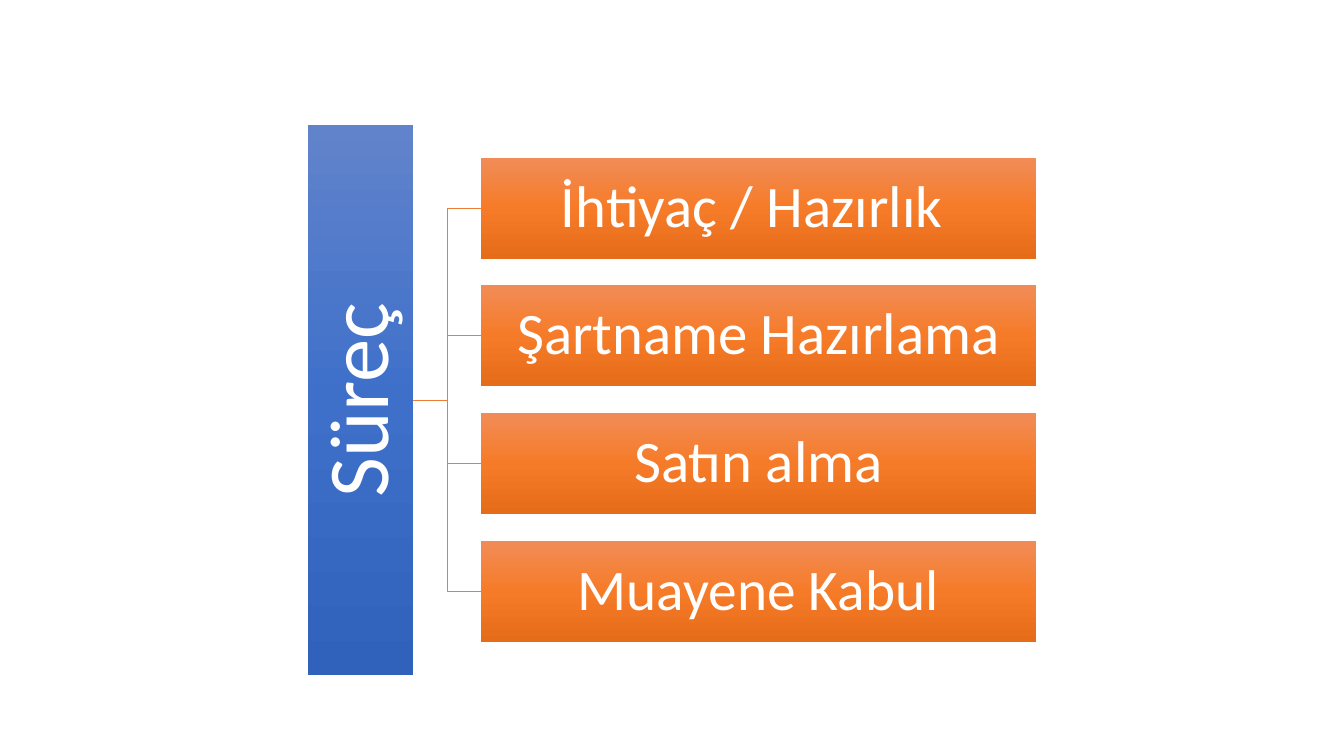
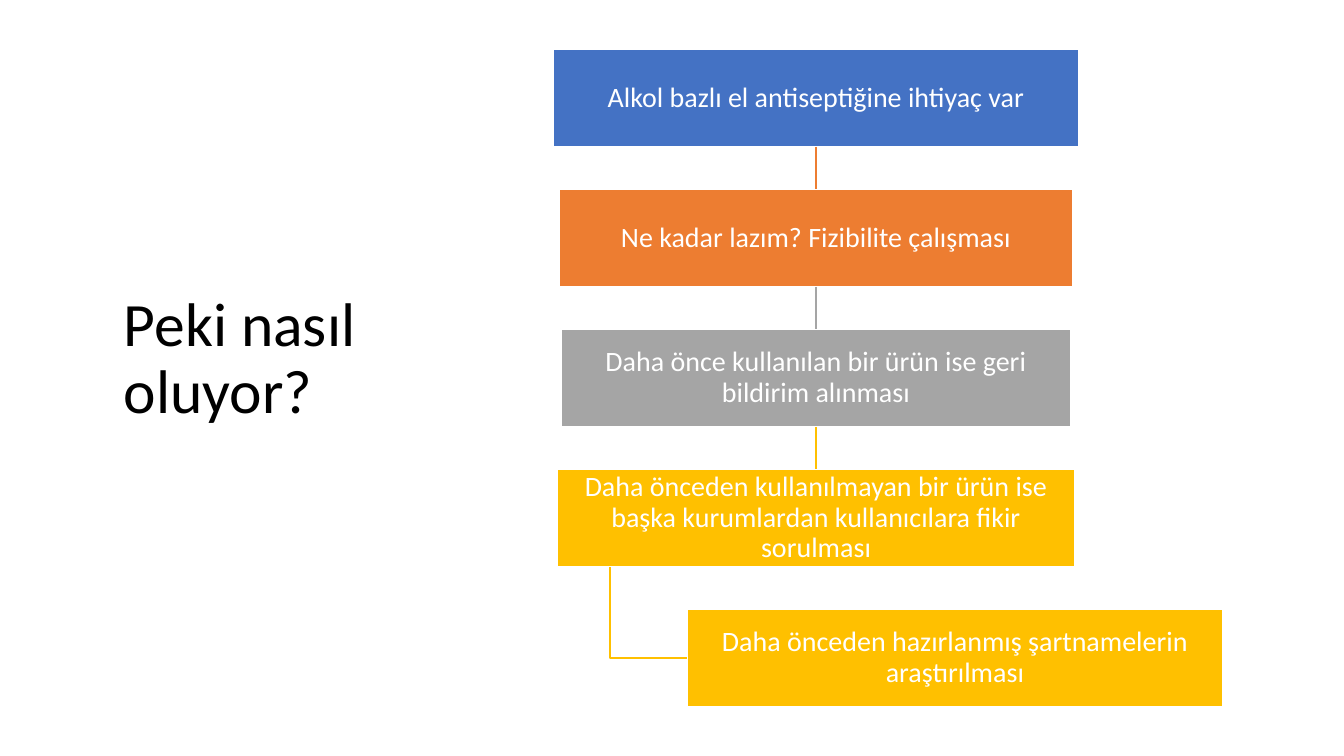
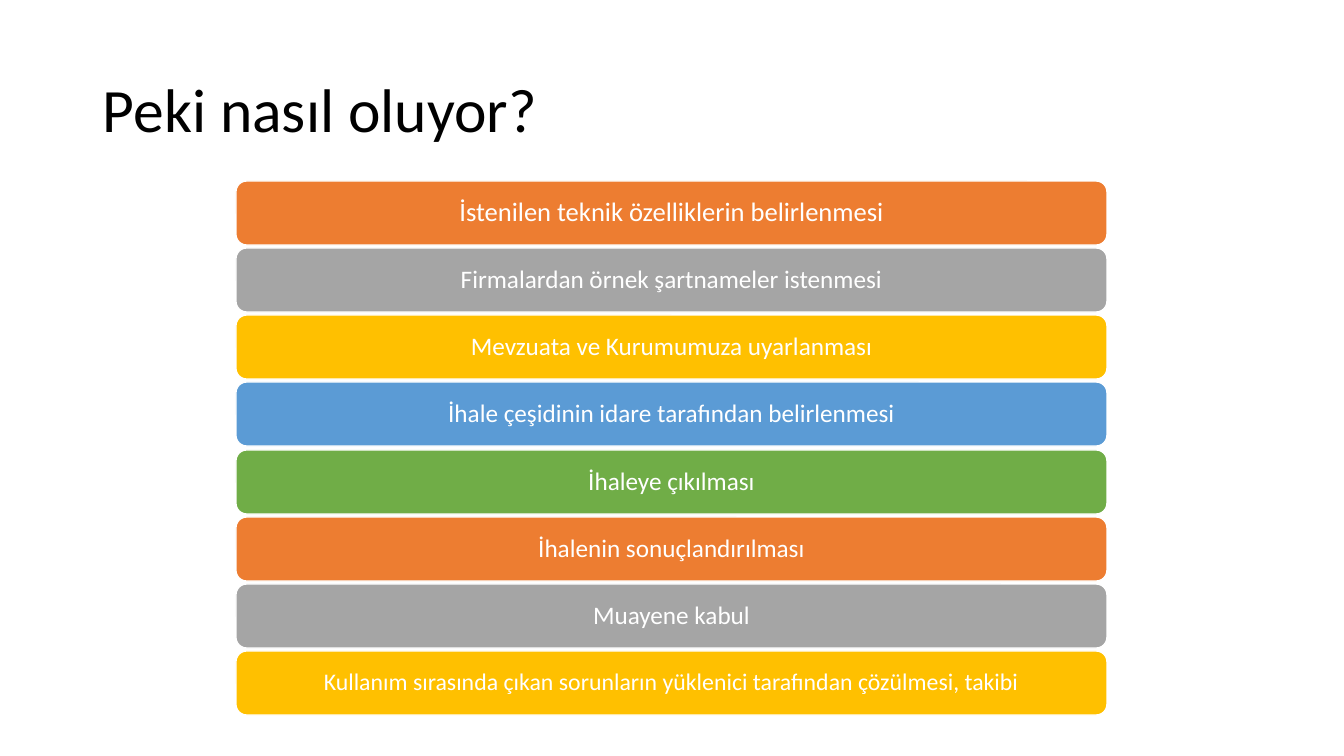
"""Build three slides on the steps of a purchase process."""
from copy import deepcopy
from dataclasses import dataclass

from pptx import Presentation
from pptx.dml.color import RGBColor
from pptx.enum.shapes import MSO_CONNECTOR, MSO_SHAPE
from pptx.enum.text import MSO_ANCHOR, PP_ALIGN
from pptx.oxml.ns import qn
from pptx.oxml.xmlchemy import OxmlElement
from pptx.util import Pt

PX = 914400 / 100.8


@dataclass(frozen=True)
class Theme:
    face: str = "Calibri"
    white: str = "FFFFFF"
    black: str = "000000"
    blue: str = "4472C4"
    orange: str = "ED7D31"
    gray: str = "A5A5A5"
    gold: str = "FFC000"
    sky: str = "5B9BD5"
    green: str = "70AD47"
    blues: tuple = ("6183CB", "3E70CA", "3062BB")
    flames: tuple = ("F18C57", "F67B28", "E56C19")
    title: int = 44
    banner: int = 62
    stage: int = 42
    step: int = 20
    row: int = 18


look = Theme()


def put(slide, text, at, size, fill=None, inset=0, kind=MSO_SHAPE.RECTANGLE):
    spot = [round(n * PX) for n in at]
    if fill is None:
        shape = slide.shapes.add_textbox(*spot)
    else:
        shape = slide.shapes.add_shape(kind, *spot)
        shape.shadow.inherit = False
    if isinstance(fill, tuple):
        shape.fill.gradient()
        shape.fill.gradient_angle = 270
        stops = shape._element.spPr.find(".//" + qn("a:gsLst"))
        stops.insert(1, deepcopy(stops[0]))
        for stop, place, hue in zip(shape.fill.gradient_stops, (0, 0.5, 1), fill):
            stop.position = place
            stop.color.rgb = RGBColor.from_string(hue)
        shape.line.fill.background()
    elif fill:
        shape.fill.solid()
        shape.fill.fore_color.rgb = RGBColor.from_string(fill)
        shape.line.color.rgb = RGBColor.from_string(look.white)
        shape.line.width = Pt(1)
    frame = shape.text_frame
    form = {"word_wrap": True, "vertical_anchor": MSO_ANCHOR.MIDDLE}
    if fill:
        for side in ("left", "top", "right", "bottom"):
            form["margin_" + side] = round(inset * PX)
    for key, value in form.items():
        setattr(frame, key, value)
    para = frame.paragraphs[0]
    para.line_spacing = 0.9
    para.alignment = PP_ALIGN.CENTER if fill else PP_ALIGN.LEFT
    run = para.add_run()
    run.text = text
    for key, value in {"name": look.face, "size": Pt(size)}.items():
        setattr(run.font, key, value)
    run.font.color.rgb = RGBColor.from_string(look.white if fill else look.black)
    return shape


def link(slide, kind, start, out, end, into, hue, width):
    line = slide.shapes.add_connector(kind, 0, 0, 0, 0)
    line.begin_connect(start, out)
    line.end_connect(end, into)
    line.line.color.rgb = RGBColor.from_string(hue)
    line.line.width = Pt(width)
    line._element.spPr.append(OxmlElement("a:effectLst"))


deck = Presentation()
deck.slide_width, deck.slide_height = round(1344 * PX), round(756 * PX)
stages, steps, rows = [deck.slides.add_slide(deck.slide_layouts[6]) for _ in range(3)]

bar = put(stages, "Süreç", (308, 125, 105, 550), look.banner, look.blues, 4)
bar.text_frame._txBody.bodyPr.set("vert", "vert270")
names = (
    ("İhtiyaç / Hazırlık ", look.stage),
    ("Şartname Hazırlama", look.stage),
    ("Satın alma", look.stage),
    ("Muayene Kabul", look.stage - 1),
)
for i, (text, size) in enumerate(names):
    box = put(stages, text, (481, 158 + 383 * i // 3, 555, 101), size, look.flames, 3)
    link(stages, MSO_CONNECTOR.ELBOW, bar, 3, box, 1, look.orange, 0.5)

put(steps, "Peki nasıl oluyor?", (114, 177, 408, 366), look.title)
chain = (
    ("Alkol bazlı el antiseptiğine ihtiyaç var", 816, 526, look.blue),
    ("Ne kadar lazım? Fizibilite çalışması", 816, 514, look.orange),
    ("Daha önce kullanılan bir ürün ise geri bildirim alınması", 816, 510, look.gray),
    ("Daha önceden kullanılmayan bir ürün ise başka kurumlardan kullanıcılara fikir sorulması",
     816, 518, look.gold),
    ("Daha önceden hazırlanmış şartnamelerin araştırılması", 955, 536, look.gold),
)
last = None
for i, (text, mid, wide, hue) in enumerate(chain):
    box = put(steps, text, (mid - wide // 2, 49 + 140 * i, wide, 98), look.step, hue, 1)
    if last and mid == 816:
        link(steps, MSO_CONNECTOR.STRAIGHT, last, 2, box, 0, hue, 1)
    last = box
bend = steps.shapes.build_freeform(610, 567, scale=PX)
bend.add_line_segments([(610, 658), (687, 658)], close=False)
branch = bend.convert_to_shape()
branch.shadow.inherit = False
branch.fill.background()
branch.line.color.rgb = RGBColor.from_string(look.gold)
branch.line.width = Pt(1)

tasks = (
    ("İstenilen teknik özelliklerin belirlenmesi", look.row + 1),
    ("Firmalardan örnek şartnameler istenmesi", look.row),
    ("Mevzuata ve Kurumumuza uyarlanması", look.row),
    ("İhale çeşidinin idare tarafından belirlenmesi", look.row),
    ("İhaleye çıkılması", look.row),
    ("İhalenin sonuçlandırılması", look.row),
    ("Muayene kabul", look.row),
    ("Kullanım sırasında çıkan sorunların yüklenici tarafından çözülmesi, takibi", look.row - 1),
)
hues = (look.orange, look.gray, look.gold, look.sky, look.green)
for i, (text, size) in enumerate(tasks):
    put(rows, text, (236, 181 + 269 * i // 4, 871, 64), size, hues[i % len(hues)], 7,
        MSO_SHAPE.ROUNDED_RECTANGLE)
put(rows, "Peki nasıl oluyor?", (93, 40, 1159, 146), look.title)

deck.save("out.pptx")
